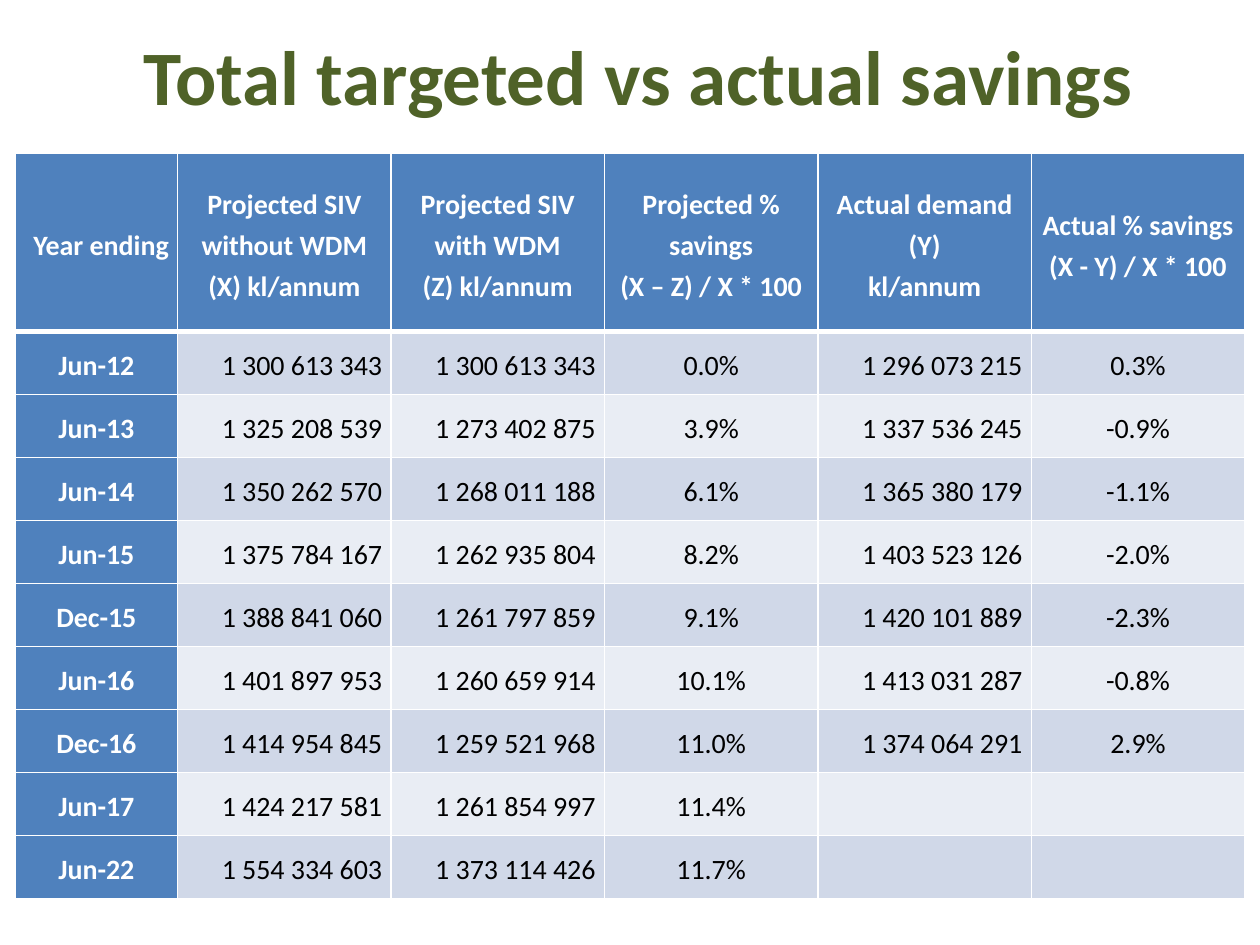
from lxml import etree
from pptx import Presentation
from pptx.dml.color import RGBColor
from pptx.enum.text import MSO_ANCHOR, PP_ALIGN
from pptx.oxml.ns import qn
from pptx.util import Inches, Pt

LEFT, CENTER, RIGHT = PP_ALIGN.LEFT, PP_ALIGN.CENTER, PP_ALIGN.RIGHT
MIDDLE = MSO_ANCHOR.MIDDLE

# Content
TITLE = "Total targeted vs actual savings"
HEADINGS = (
    "Year ending",
    "Projected SIV without WDM\n(X) kl/annum",
    "Projected SIV with WDM\n(Z) kl/annum",
    "Projected % savings\n(X – Z) / X * 100",
    "Actual demand\n(Y)\nkl/annum",
    "Actual % savings\n(X - Y) / X * 100",
)
SAVINGS = (
    ("Jun-12", "1 300 613 343", "1 300 613 343", "0.0%", "1 296 073 215", "0.3%"),
    ("Jun-13", "1 325 208 539", "1 273 402 875", "3.9%", "1 337 536 245", "-0.9%"),
    ("Jun-14", "1 350 262 570", "1 268 011 188", "6.1%", "1 365 380 179", "-1.1%"),
    ("Jun-15", "1 375 784 167", "1 262 935 804", "8.2%", "1 403 523 126", "-2.0%"),
    ("Dec-15", "1 388 841 060", "1 261 797 859", "9.1%", "1 420 101 889", "-2.3%"),
    ("Jun-16", "1 401 897 953", "1 260 659 914", "10.1%", "1 413 031 287", "-0.8%"),
    ("Dec-16", "1 414 954 845", "1 259 521 968", "11.0%", "1 374 064 291", "2.9%"),
    ("Jun-17", "1 424 217 581", "1 261 854 997", "11.4%", "", ""),
    ("Jun-22", "1 554 334 603", "1 373 114 426", "11.7%", "", ""),
)
HEADING_ALIGN = (RIGHT, CENTER, CENTER, CENTER, CENTER, CENTER)
VALUE_ALIGN = (CENTER, RIGHT, RIGHT, CENTER, RIGHT, CENTER)

THEME = {
    "font": "Calibri",
    "title_size": 44,
    "table_size": 16,
    "title": "4F6228",
    "header": "4F81BD",
    "bands": ("D0D8E8", "E9EDF4"),
    "light": "FFFFFF",
    "dark": "000000",
}

# Layout in inches
MARGIN, TABLE_TOP, WIDTH = 0.12, 1.22, 9.76
YEAR_WIDTH, VALUE_WIDTH = 1.29, 1.694
HEADING_HEIGHT, ROW_HEIGHT = 1.41, 0.5


def set_all(target, values):
    for name, value in values.items():
        setattr(target, name, value)


def style_text(paragraph, size, color, bold):
    set_all(paragraph.font, {"name": THEME["font"], "size": Pt(size), "bold": bold})
    paragraph.font.color.rgb = RGBColor.from_string(color)


def add_borders(cell, bottom_width):
    """Draw white cell borders; they must come before the fill."""
    properties = cell._tc.get_or_add_tcPr()
    widths = {"a:lnL": 1, "a:lnR": 1, "a:lnT": 1, "a:lnB": bottom_width}
    for side, width in widths.items():
        line = etree.SubElement(properties, qn(side), w=str(Pt(width)))
        fill = etree.SubElement(line, qn("a:solidFill"))
        etree.SubElement(fill, qn("a:srgbClr"), val=THEME["light"])


def fill_cell(cell, text, align, fill, color, bold, bottom_width):
    add_borders(cell, bottom_width)
    cell.fill.solid()
    cell.fill.fore_color.rgb = RGBColor.from_string(fill)
    set_all(cell, {"vertical_anchor": MIDDLE, "margin_left": Inches(0.07),
                   "margin_right": Inches(0.07), "margin_top": 0, "margin_bottom": 0})
    paragraph = cell.text_frame.paragraphs[0]
    paragraph.text = text
    set_all(paragraph, {"alignment": align, "line_spacing": 1.2})
    style_text(paragraph, THEME["table_size"], color, bold)


def add_title(slide):
    box = slide.shapes.add_textbox(Inches(MARGIN), Inches(-0.03), Inches(WIDTH), Inches(1.25))
    frame = box.text_frame
    set_all(frame, {"word_wrap": True, "vertical_anchor": MIDDLE,
                    "margin_left": Inches(0.24)})
    heading = frame.paragraphs[0]
    heading.text = TITLE
    heading.alignment = CENTER
    style_text(heading, THEME["title_size"], THEME["title"], True)


def add_savings_table(slide):
    height = HEADING_HEIGHT + ROW_HEIGHT * len(SAVINGS)
    table = slide.shapes.add_table(
        len(SAVINGS) + 1, len(HEADINGS), Inches(MARGIN), Inches(TABLE_TOP),
        Inches(WIDTH), Inches(height)).table
    for index, column in enumerate(table.columns):
        column.width = Inches(VALUE_WIDTH if index else YEAR_WIDTH)
    for index, row in enumerate(table.rows):
        row.height = Inches(ROW_HEIGHT if index else HEADING_HEIGHT)

    for r, texts in enumerate((HEADINGS, *SAVINGS)):
        for c, text in enumerate(texts):
            is_header = r == 0 or c == 0
            align = VALUE_ALIGN[c] if r else HEADING_ALIGN[c]
            fill = THEME["header"] if is_header else THEME["bands"][(r - 1) % 2]
            color = THEME["light"] if is_header else THEME["dark"]
            fill_cell(table.cell(r, c), text, align, fill, color, is_header,
                      bottom_width=1 if r else 3)


def main():
    presentation = Presentation()
    set_all(presentation, {"slide_width": Inches(10), "slide_height": Inches(7.5)})
    slide = presentation.slides.add_slide(presentation.slide_layouts[6])
    add_title(slide)
    add_savings_table(slide)
    presentation.save("out.pptx")


if __name__ == "__main__":
    main()
